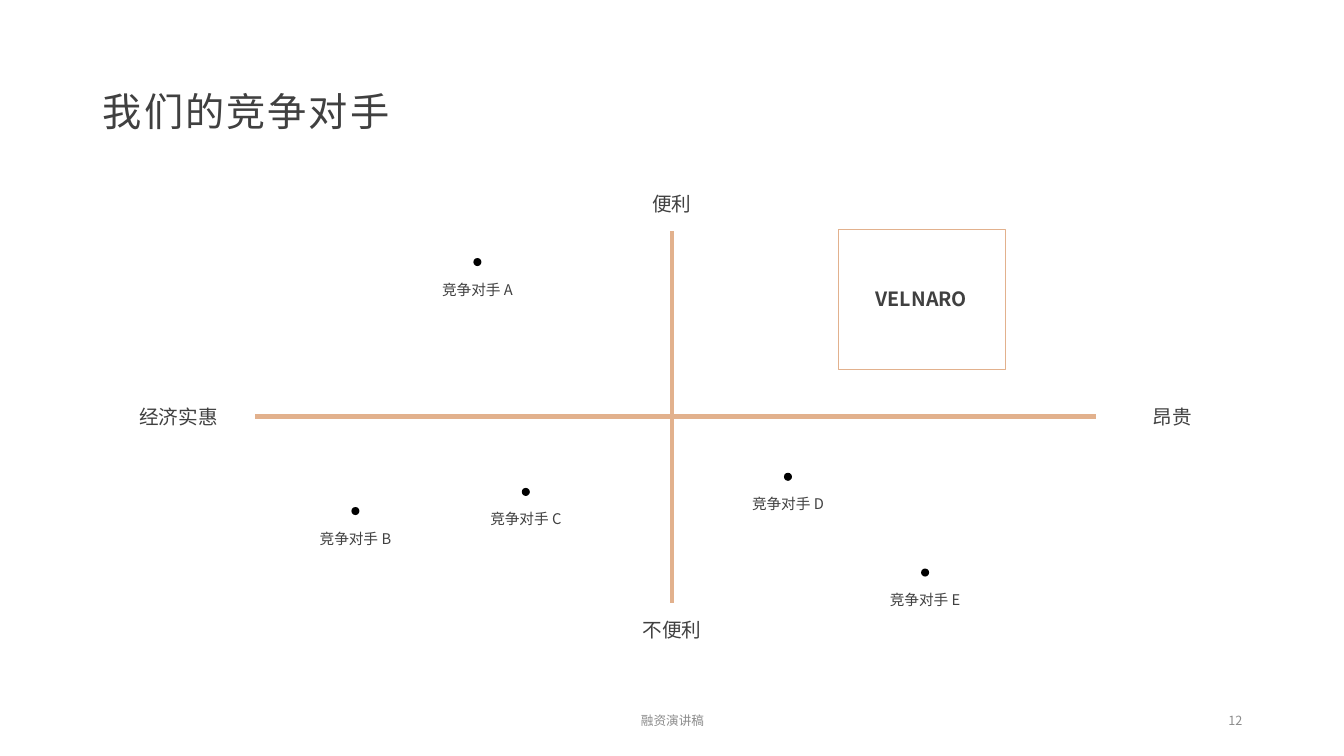
from dataclasses import dataclass

from lxml.etree import SubElement
from pptx import Presentation
from pptx.dml.color import RGBColor
from pptx.enum.shapes import MSO_CONNECTOR as Connector, MSO_SHAPE as Shape
from pptx.enum.text import MSO_ANCHOR as Anchor, MSO_AUTO_SIZE as AutoSize, PP_ALIGN as Align
from pptx.oxml.ns import qn
from pptx.shapes.autoshape import Shape as Box
from pptx.slide import Slide
from pptx.util import Inches, Pt

FONT = "Noto Sans CJK SC"
INK = RGBColor(0x40, 0x40, 0x40)
GREY = RGBColor(0x8C, 0x8C, 0x8C)
PEACH = RGBColor(0xE2, 0xB1, 0x8D)
BLACK = RGBColor(0, 0, 0)

DOT = 0.08
DOT_RISE = 0.04
RIVAL_WIDTH = 1.29
LABEL_HEIGHT = 0.54
TOP, LEFT, BOTTOM, RIGHT = range(4)


@dataclass
class Label:
    text: str
    left: float
    top: float
    width: float
    height: float = LABEL_HEIGHT
    size: float = 14
    color: RGBColor = INK
    align: Align = Align.CENTER
    bold: bool = False
    space_before: float = 10


@dataclass
class Rival:
    letter: str
    left: float
    top: float


CONVENIENT = Label("便利", 5.73, 1.75, 1.87)
INCONVENIENT = Label("不便利", 5.73, 5.98, 1.87)
AFFORDABLE = Label("经济实惠", 1.01, 3.86, 1.52)
EXPENSIVE = Label("昂贵", 10.87, 3.86, 1.51)
OWN_COMPANY = Label("VELNARO", 8.31, 2.27, 1.66, 1.39, bold=True)
FOOTERS = [
    Label("融资演讲稿", 4.42, 6.95, 4.5, 0.4, 9, GREY, space_before=0),
    Label("12", 9.42, 6.95, 3, 0.4, 9, GREY, Align.RIGHT, space_before=0),
]
RIVALS = [
    Rival("A", 4.09, 2.6),
    Rival("B", 2.88, 5.07),
    Rival("C", 4.57, 4.88),
    Rival("D", 7.17, 4.73),
    Rival("E", 8.53, 5.68),
]


def write(box: Box, label: Label) -> None:
    frame = box.text_frame
    frame.word_wrap = True
    frame.auto_size = AutoSize.NONE
    frame.vertical_anchor = Anchor.MIDDLE
    para = frame.paragraphs[0]
    para.alignment = label.align
    para.space_before = Pt(label.space_before)
    span = para.add_run()
    span.text = label.text
    span.font.name = FONT
    span.font.size = Pt(label.size)
    span.font.bold = label.bold
    span.font.color.rgb = label.color
    SubElement(span.font._element, qn("a:ea"), typeface=FONT)


def add_label(page: Slide, label: Label) -> Box:
    box = page.shapes.add_textbox(
        Inches(label.left), Inches(label.top), Inches(label.width), Inches(label.height)
    )
    write(box, label)
    return box


def add_title(page: Slide, label: Label) -> None:
    title = page.shapes.title
    title.left, title.top = Inches(label.left), Inches(label.top)
    title.width, title.height = Inches(label.width), Inches(label.height)
    write(title, label)
    para = title.text_frame.paragraphs[0]
    para.line_spacing = 0.9
    para.runs[0].font._element.set("spc", "150")


def add_axis(page: Slide, start: Box, start_side: int, end: Box, end_side: int) -> None:
    axis = page.shapes.add_connector(Connector.STRAIGHT, 0, 0, 0, 0)
    axis.begin_connect(start, start_side)
    axis.end_connect(end, end_side)
    axis.line.color.rgb = PEACH
    axis.line.width = Pt(3.5)
    SubElement(axis._element.spPr, qn("a:effectLst"))


def add_rival(page: Slide, rival: Rival) -> None:
    add_label(page, Label(f"竞争对手 {rival.letter}", rival.left, rival.top, RIVAL_WIDTH, size=10.5))
    dot = page.shapes.add_shape(
        Shape.OVAL,
        Inches(rival.left + (RIVAL_WIDTH - DOT) / 2),
        Inches(rival.top - DOT_RISE),
        Inches(DOT),
        Inches(DOT),
    )
    dot.shadow.inherit = False
    dot.fill.solid()
    dot.fill.fore_color.rgb = BLACK
    dot.line.fill.background()


def add_own_company(page: Slide, label: Label) -> None:
    panel = page.shapes.add_shape(
        Shape.RECTANGLE,
        Inches(label.left),
        Inches(label.top),
        Inches(label.width),
        Inches(label.height),
    )
    panel.shadow.inherit = False
    panel.fill.background()
    panel.line.color.rgb = PEACH
    panel.line.width = Pt(0.25)
    write(panel, label)


def main() -> None:
    deck = Presentation()
    deck.slide_width, deck.slide_height = Inches(13.33), Inches(7.5)
    page = deck.slides.add_slide(deck.slide_layouts[5])

    add_title(page, Label("我们的竞争对手", 0.92, 0.4, 11.5, 1.45, 28, align=Align.LEFT, space_before=0))

    # Axes joined to the labels at their ends
    top = add_label(page, CONVENIENT)
    bottom = add_label(page, INCONVENIENT)
    left = add_label(page, AFFORDABLE)
    right = add_label(page, EXPENSIVE)
    add_axis(page, left, RIGHT, right, LEFT)
    add_axis(page, bottom, TOP, top, BOTTOM)

    # Companies on the map
    for rival in RIVALS:
        add_rival(page, rival)
    add_own_company(page, OWN_COMPANY)

    # Footer and page number
    for footer in FOOTERS:
        add_label(page, footer)

    deck.save("out.pptx")


if __name__ == "__main__":
    main()
